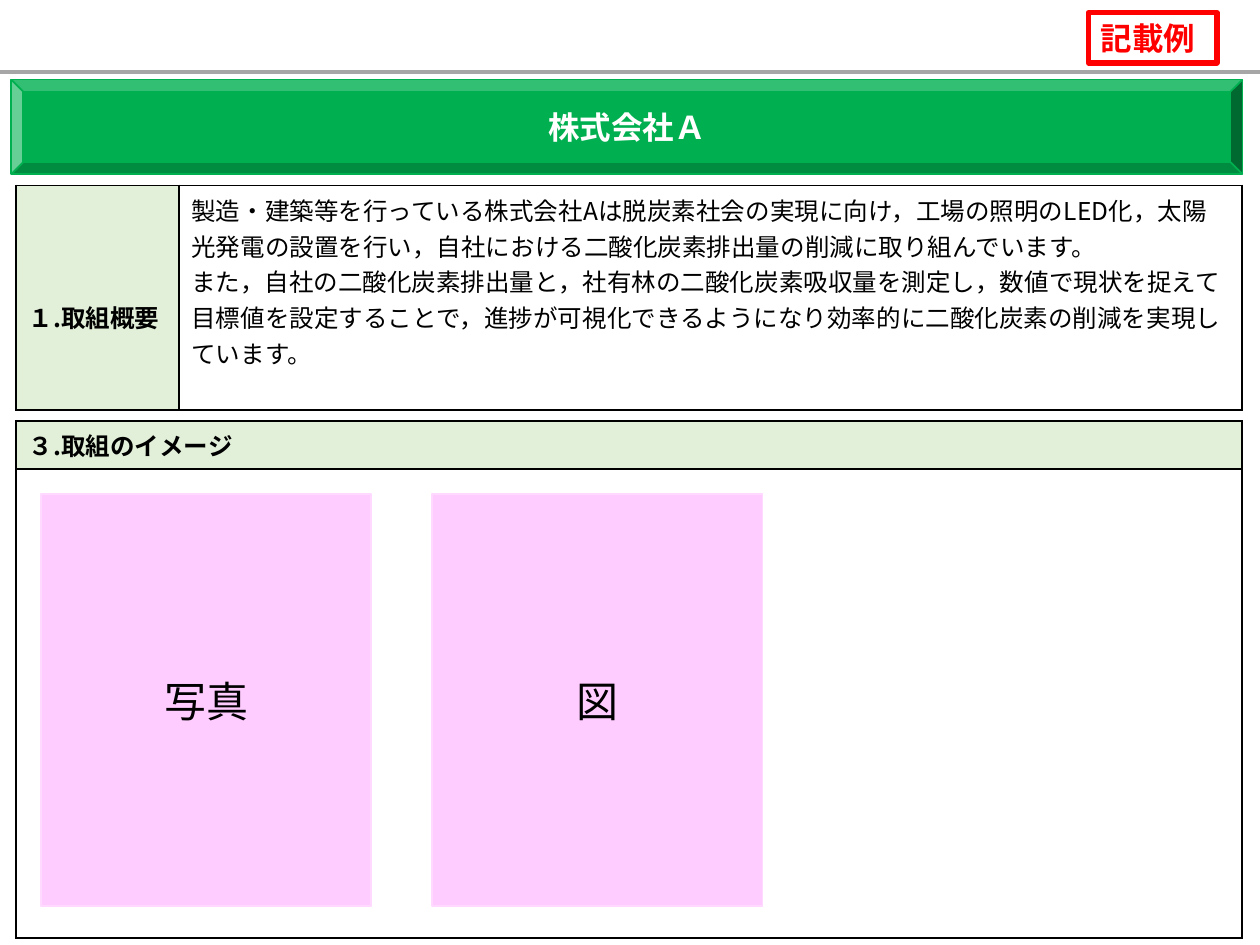
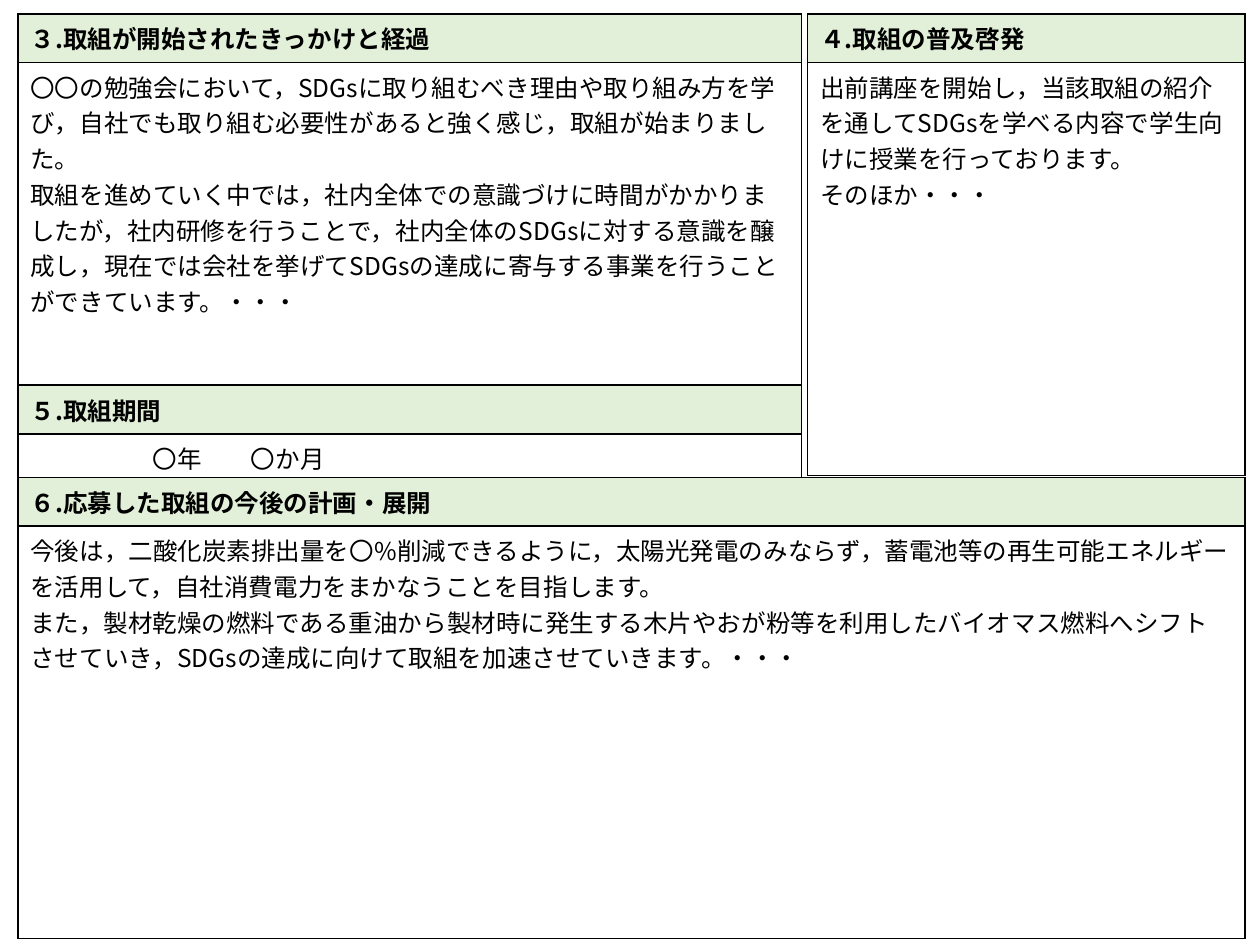
from lxml.etree import SubElement
from pptx import Presentation
from pptx.dml.color import RGBColor
from pptx.enum.lang import MSO_LANGUAGE_ID
from pptx.enum.shapes import MSO_CONNECTOR, MSO_SHAPE
from pptx.enum.text import MSO_ANCHOR, PP_ALIGN
from pptx.oxml.ns import qn
from pptx.util import Pt

FONT = "Noto Sans CJK JP"
BLACK = RGBColor(0x00, 0x00, 0x00)
WHITE = RGBColor(0xFF, 0xFF, 0xFF)
RED = RGBColor(0xFF, 0x00, 0x00)
GREEN = RGBColor(0x00, 0xB0, 0x50)
PALE_GREEN = RGBColor(0xE2, 0xF0, 0xD9)
GRAY = RGBColor(0xA6, 0xA6, 0xA6)
PINK = RGBColor(0xFF, 0xCC, 0xFF)
PINK_EDGE = RGBColor(0xFF, 0xD9, 0xFF)

HEADING_HEIGHT = 25.2
BODY_SIZE = 14
CELL_INSET = 7.2


def write(text_frame, text, size, color=BLACK, bold=False, align=PP_ALIGN.LEFT):
    text_frame.text = text
    for para in text_frame.paragraphs:
        para.alignment = align
        for span in para.runs:
            font = span.font
            font.size, font.bold, font.name = Pt(size), bold, FONT
            font.color.rgb = color
            font.language_id = MSO_LANGUAGE_ID.JAPANESE
            SubElement(span._r.get_or_add_rPr(), qn("a:ea"), typeface=FONT)


def add_box(page, kind, box, fill, edge, edge_width):
    shape = page.shapes.add_shape(kind, *map(Pt, box))
    shape.shadow.inherit = False
    if fill is None:
        shape.fill.background()
    else:
        shape.fill.solid()
        shape.fill.fore_color.rgb = fill
    shape.line.color.rgb = edge
    shape.line.width = Pt(edge_width)
    shape.text_frame.word_wrap = True
    shape.text_frame.vertical_anchor = MSO_ANCHOR.MIDDLE
    return shape


def style_cell(cell, fill):
    properties = cell._tc.get_or_add_tcPr()
    for side in ("a:lnL", "a:lnR", "a:lnT", "a:lnB"):
        border = SubElement(properties, qn(side), w=str(Pt(1)))
        SubElement(SubElement(border, qn("a:solidFill")), qn("a:srgbClr"), val=str(BLACK))
    cell.fill.solid()
    cell.fill.fore_color.rgb = fill


def add_grid(page, left, top, widths, heights):
    frame = page.shapes.add_table(len(heights), len(widths), Pt(left), Pt(top),
                                  Pt(sum(widths)), Pt(sum(heights)))
    table = frame.table
    table.first_row = table.horz_banding = False
    for column, width in zip(table.columns, widths):
        column.width = Pt(width)
    for row, height in zip(table.rows, heights):
        row.height = Pt(height)
    return table


def add_section(page, box, heading, body="", heading_height=HEADING_HEIGHT):
    """Heading row over a body row; returns the body cell."""
    left, top, width, height = box
    table = add_grid(page, left, top, [width], [heading_height, height - heading_height])
    heading_cell, body_cell = table.cell(0, 0), table.cell(1, 0)
    style_cell(heading_cell, PALE_GREEN)
    style_cell(body_cell, WHITE)
    write(heading_cell.text_frame, heading, BODY_SIZE, bold=True)
    if body:
        write(body_cell.text_frame, body, BODY_SIZE)
    return body_cell


def add_banner(page, box, company):
    banner = add_box(page, MSO_SHAPE.BEVEL, box, GREEN, GREEN, 1)
    write(banner.text_frame, company, 18, WHITE, True, PP_ALIGN.CENTER)


def add_rule(page, y, width):
    rule = page.shapes.add_connector(MSO_CONNECTOR.STRAIGHT, 0, Pt(y), Pt(width), Pt(y))
    rule.line.color.rgb = GRAY
    rule.line.width = Pt(2.25)
    SubElement(rule._element.spPr, qn("a:effectLst"))


def add_summary(page, box, heading, body):
    left, top, width, height = box
    heading_width = 93
    table = add_grid(page, left, top, [heading_width, width - heading_width], [height])
    heading_cell, body_cell = table.cell(0, 0), table.cell(0, 1)
    style_cell(heading_cell, PALE_GREEN)
    style_cell(body_cell, WHITE)
    heading_cell.margin_top = Pt(65)  # level with the fourth line of the body
    write(heading_cell.text_frame, heading, BODY_SIZE, bold=True)
    write(body_cell.text_frame, body, BODY_SIZE)


def add_image_area(page, box, heading, labels):
    add_section(page, box, heading)
    left, top, _, _ = box
    frame_width, frame_height, pitch = 188.8, 235.6, 223.6
    for index, label in enumerate(labels):
        frame_box = (left + 14.2 + index * pitch, top + 41.8, frame_width, frame_height)
        frame = add_box(page, MSO_SHAPE.RECTANGLE, frame_box, PINK, PINK_EDGE, 1)
        write(frame.text_frame, label, 24, align=PP_ALIGN.CENTER)


def add_period(page, box, heading, period):
    cell = add_section(page, box, heading, period, heading_height=16)
    cell.margin_left = Pt(CELL_INSET + 5 * BODY_SIZE)
    # Months start two characters after the two-character year
    properties = cell.text_frame.paragraphs[0]._p.get_or_add_pPr()
    tabs = SubElement(properties, qn("a:tabLst"))
    SubElement(tabs, qn("a:tab"), pos=str(Pt(4 * BODY_SIZE)), algn="l")


def build_overview(page):
    left, width = 9.2, 700.6
    add_rule(page, 41.2, 720)
    add_banner(page, (6.5, 45.5, 703.5, 54), "株式会社Ａ")
    add_summary(
        page, (left, 106, width, 128.4), "１.取組概要",
        "製造・建築等を行っている株式会社Aは脱炭素社会の実現に向け，工場の照明のLED化，"
        "太陽光発電の設置を行い，自社における二酸化炭素排出量の削減に取り組んでいます。\n"
        "また，自社の二酸化炭素排出量と，社有林の二酸化炭素吸収量を測定し，"
        "数値で現状を捉えて目標値を設定することで，"
        "進捗が可視化できるようになり効率的に二酸化炭素の削減を実現しています。")
    add_image_area(page, (left, 240.5, width, 293), "３.取組のイメージ", ["写真", "図"])
    # Sample badge
    badge = add_box(page, MSO_SHAPE.RECTANGLE, (622, 7.2, 73.4, 28.8), None, RED, 3)
    write(badge.text_frame, "記載例", 18, RED, True)


def build_details(page):
    left, top, left_width, width = 10.2, 8, 447.8, 701.2
    right_left = 461.5
    add_section(
        page, (left, top, left_width, 209.2), "３.取組が開始されたきっかけと経過",
        "〇〇の勉強会において，SDGsに取り組むべき理由や取り組み方を学び，"
        "自社でも取り組む必要性があると強く感じ，取組が始まりました。\n"
        "取組を進めていく中では，社内全体での意識づけに時間がかかりましたが，"
        "社内研修を行うことで，社内全体のSDGsに対する意識を醸成し，"
        "現在では会社を挙げてSDGsの達成に寄与する事業を行うことができています。・・・")
    add_section(
        page, (right_left, top, left + width - right_left, 261.2), "４.取組の普及啓発",
        "出前講座を開始し，当該取組の紹介を通してSDGsを学べる内容で"
        "学生向けに授業を行っております。\n"
        "そのほか・・・")
    add_period(page, (left, 220.3, left_width, 41.2), "５.取組期間", "〇年\t〇か月")
    add_section(
        page, (left, 272.8, width, 261.2), "６.応募した取組の今後の計画・展開",
        "今後は，二酸化炭素排出量を〇%削減できるように，太陽光発電のみならず，"
        "蓄電池等の再生可能エネルギーを活用して，自社消費電力をまかなうことを目指します。\n"
        "また，製材乾燥の燃料である重油から製材時に発生する木片やおが粉等を利用した"
        "バイオマス燃料へシフトさせていき，SDGsの達成に向けて取組を加速させていきます。・・・")


def main():
    deck = Presentation()
    deck.slide_width, deck.slide_height = Pt(720), Pt(540)
    for build in (build_overview, build_details):
        build(deck.slides.add_slide(deck.slide_layouts[6]))
    deck.save("out.pptx")


if __name__ == "__main__":
    main()
